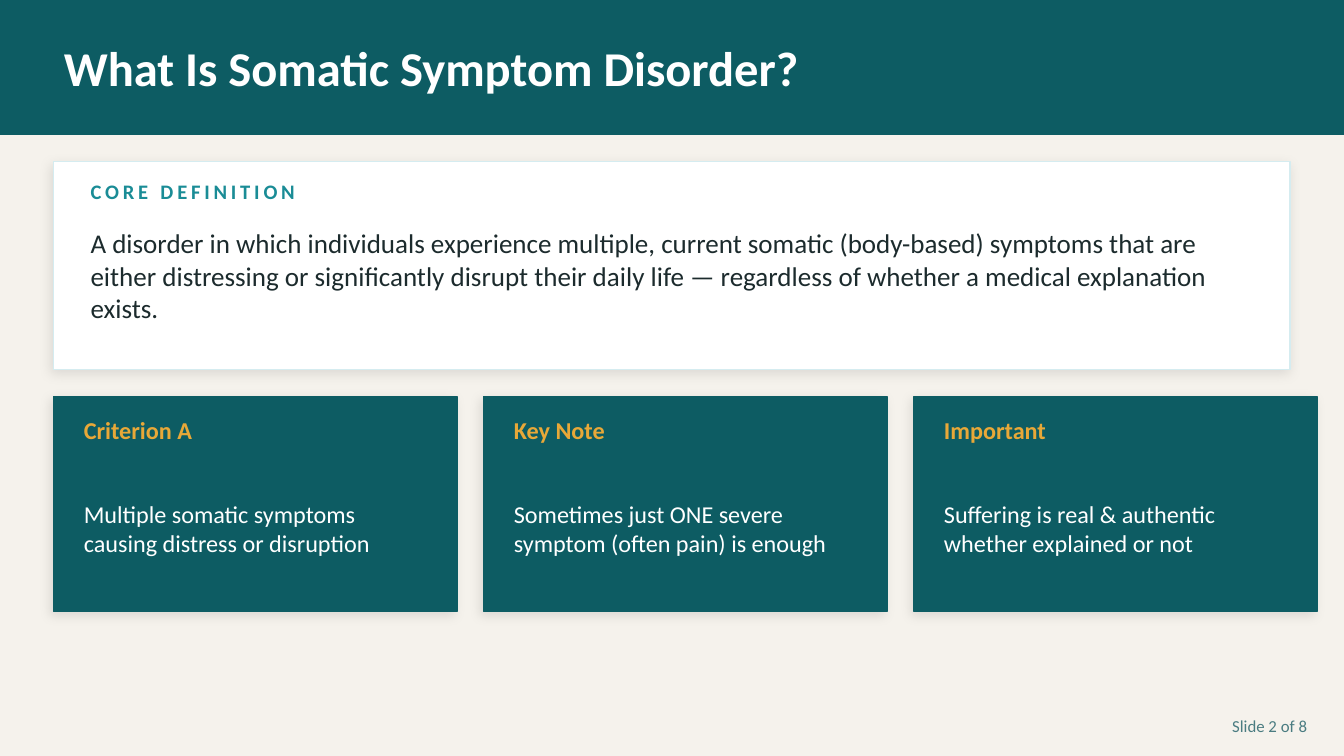
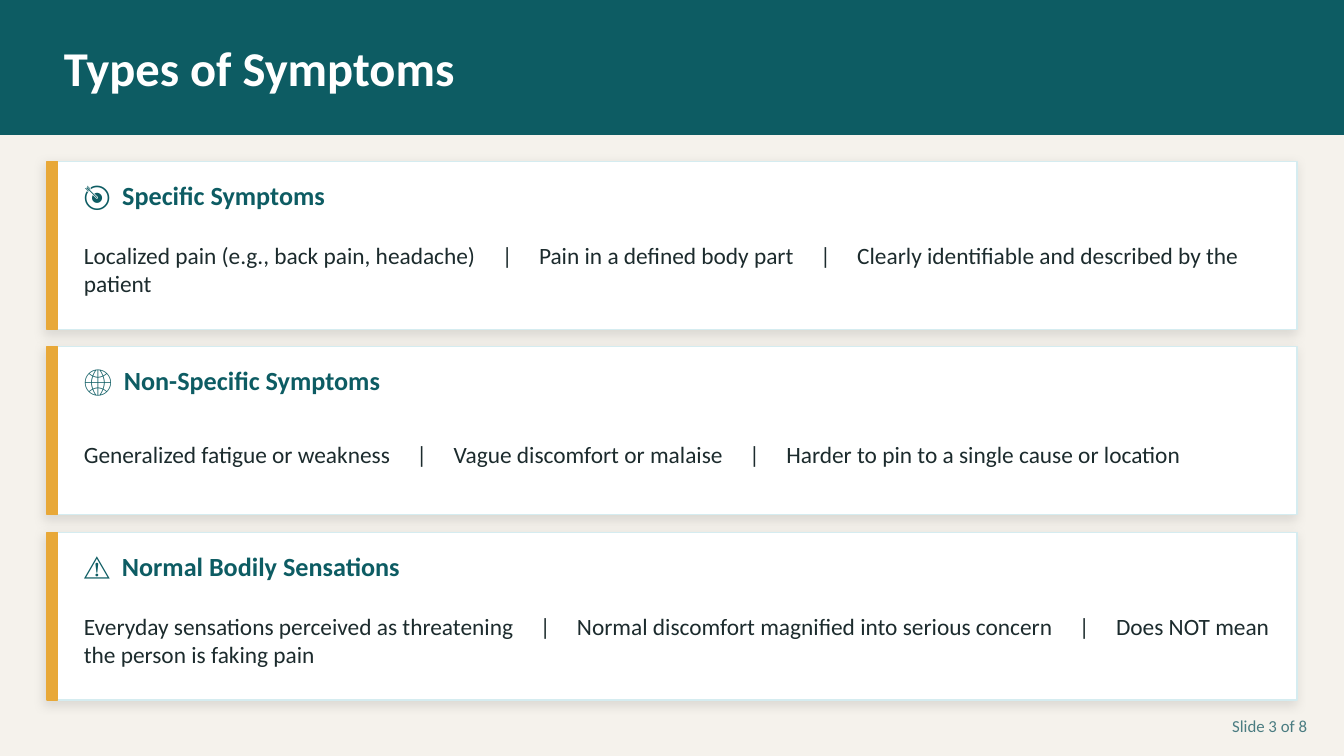
from pptx import Presentation
from pptx.dml.color import RGBColor
from pptx.enum.shapes import MSO_SHAPE as Shape
from pptx.enum.text import MSO_ANCHOR as Anchor, MSO_AUTO_SIZE as AutoSize, PP_ALIGN as Align
from pptx.oxml import parse_xml
from pptx.oxml.ns import nsdecls
from pptx.util import Emu, Pt

PX = 6096  # EMU per px: the slide is 2000 x 1125 px
FONT = "Calibri"
TEAL = RGBColor(0x0D, 0x5C, 0x63)
BRIGHT_TEAL = RGBColor(0x1A, 0x8C, 0x96)
MUTED_TEAL = RGBColor(0x4A, 0x7C, 0x81)
PALE_TEAL = RGBColor(0xD5, 0xEC, 0xF0)
AMBER = RGBColor(0xE8, 0xA8, 0x38)
CREAM = RGBColor(0xF5, 0xF2, 0xEC)
INK = RGBColor(0x1C, 0x2B, 0x2D)
WHITE = RGBColor(0xFF, 0xFF, 0xFF)

SLIDE_COUNT = 8
ICON_GAP = (" ", 4.2)
DIVIDER = (" |", 15.1)

CRITERIA = [
    ("Criterion A", ["Multiple somatic symptoms", "causing distress or disruption"]),
    ("Key Note", ["Sometimes just ONE severe", "symptom (often pain) is enough"]),
    ("Important", ["Suffering is real & authentic", "whether explained or not"]),
]
SYMPTOMS = [
    ("🎯", "Specific Symptoms",
     ["Localized pain (e.g., back pain, headache)", "Pain in a defined body part",
      "Clearly identifiable and described by the patient"]),
    ("🌐", "Non-Specific Symptoms",
     ["Generalized fatigue or weakness", "Vague discomfort or malaise",
      "Harder to pin to a single cause or location"]),
    ("⚠️", "Normal Bodily Sensations",
     ["Everyday sensations perceived as threatening",
      "Normal discomfort magnified into serious concern",
      "Does NOT mean the person is faking pain"]),
]


def emu(box):
    return [Emu(length * PX) for length in box]


def write_text(frame, lines, size, color, bold=False, align=Align.LEFT):
    """Each line is a list of (text, letter spacing in points) runs."""
    frame.word_wrap = True
    frame.auto_size = AutoSize.NONE
    frame.vertical_anchor = Anchor.MIDDLE
    for index, line in enumerate(lines):
        paragraph = frame.add_paragraph() if index else frame.paragraphs[0]
        paragraph.alignment = align
        for text, spacing in line:
            run = paragraph.add_run()
            run.text = text
            run.font.name = FONT
            run.font.size = Pt(size)
            run.font.bold = bold
            run.font.color.rgb = color
            if spacing:
                run.font._element.set("spc", str(round(spacing * 100)))


def add_text(slide, box, lines, **style):
    write_text(slide.shapes.add_textbox(*emu(box)).text_frame, lines, **style)


def add_panel(slide, box, fill, line=None, shadow=False):
    panel = slide.shapes.add_shape(Shape.RECTANGLE, *emu(box))
    panel.fill.solid()
    panel.fill.fore_color.rgb = fill
    panel.line.color.rgb = line or fill
    panel.line.width = Pt(1)
    panel.shadow.inherit = False
    if shadow:
        effects = panel._element.spPr.find("{*}effectLst")
        effects.append(parse_xml(
            f'<a:outerShdw {nsdecls("a")} blurRad="{Pt(8)}" dist="{Pt(3)}" dir="8100000" '
            'algn="bl" rotWithShape="0"><a:srgbClr val="000000">'
            '<a:alpha val="10000"/></a:srgbClr></a:outerShdw>'))
    return panel


def add_base_slide(presentation, title, number):
    slide = presentation.slides.add_slide(presentation.slide_layouts[5])
    # Band, kept behind the title
    band = add_panel(slide, (0, 0, 2000, 200), TEAL)
    slide.shapes._spTree.insert(2, band._element)
    # Title
    heading = slide.shapes.title
    heading.left, heading.top, heading.width, heading.height = emu((80, 20, 1840, 160))
    write_text(heading.text_frame, [[(title, 0)]], size=34.7, color=WHITE, bold=True)
    # Page number
    add_text(slide, (1700, 1060, 260, 40), [[(f"Slide {number} of {SLIDE_COUNT}", 0)]],
             size=12, color=MUTED_TEAL, align=Align.RIGHT)
    return slide


def add_definition(slide, box, label, definition):
    left, top, width, _ = box
    add_panel(slide, box, WHITE, line=PALE_TEAL, shadow=True)
    add_text(slide, (left + 40, top + 10, 600, 70), [[(label, 2.7)]],
             size=14.7, color=BRIGHT_TEAL, bold=True)
    add_text(slide, (left + 40, top + 80, width - 80, 180), [[(definition, 0)]],
             size=19.3, color=INK)


def add_criterion(slide, box, heading, lines):
    left, top, width, _ = box
    add_panel(slide, box, TEAL, shadow=True)
    add_text(slide, (left + 30, top + 10, width - 60, 80), [[(heading, 0)]],
             size=17.3, color=AMBER, bold=True)
    add_text(slide, (left + 30, top + 86, width - 60, 220), [[(line, 0)] for line in lines],
             size=17.3, color=WHITE)


def add_symptom(slide, box, icon, heading, examples):
    left, top, width, height = box
    add_panel(slide, box, WHITE, line=PALE_TEAL, shadow=True)
    add_panel(slide, (left, top, 16, height), AMBER)
    add_text(slide, (left + 40, top + 10, 640, 80), [[(icon, 0), ICON_GAP, (heading, 0)]],
             size=18.7, color=TEAL, bold=True)
    # Examples on one line, parted by evenly spaced bars
    runs = [(examples[0], 0)]
    for example in examples[1:]:
        runs += [DIVIDER, (" " + example, 0)]
    add_text(slide, (left + 40, top + 100, width - 60, 120), [runs], size=16.7, color=INK)


def add_definition_slide(presentation):
    slide = add_base_slide(presentation, "What Is Somatic Symptom Disorder?", 2)
    add_definition(
        slide, (80, 240, 1840, 310), "CORE DEFINITION",
        "A disorder in which individuals experience multiple, current somatic (body-based) "
        "symptoms that are either distressing or significantly disrupt their daily life — "
        "regardless of whether a medical explanation exists.")
    for column, criterion in enumerate(CRITERIA):
        add_criterion(slide, (80 + column * 640, 590, 600, 320), *criterion)


def add_symptoms_slide(presentation):
    slide = add_base_slide(presentation, "Types of Symptoms", 3)
    for row, symptom in enumerate(SYMPTOMS):
        add_symptom(slide, (70, 240 + row * 276, 1860, 250), *symptom)


def main():
    presentation = Presentation()
    presentation.slide_width, presentation.slide_height = emu((2000, 1125))
    background = presentation.slide_master.background.fill
    background.solid()
    background.fore_color.rgb = CREAM
    add_definition_slide(presentation)
    add_symptoms_slide(presentation)
    presentation.save("out.pptx")


if __name__ == "__main__":
    main()
